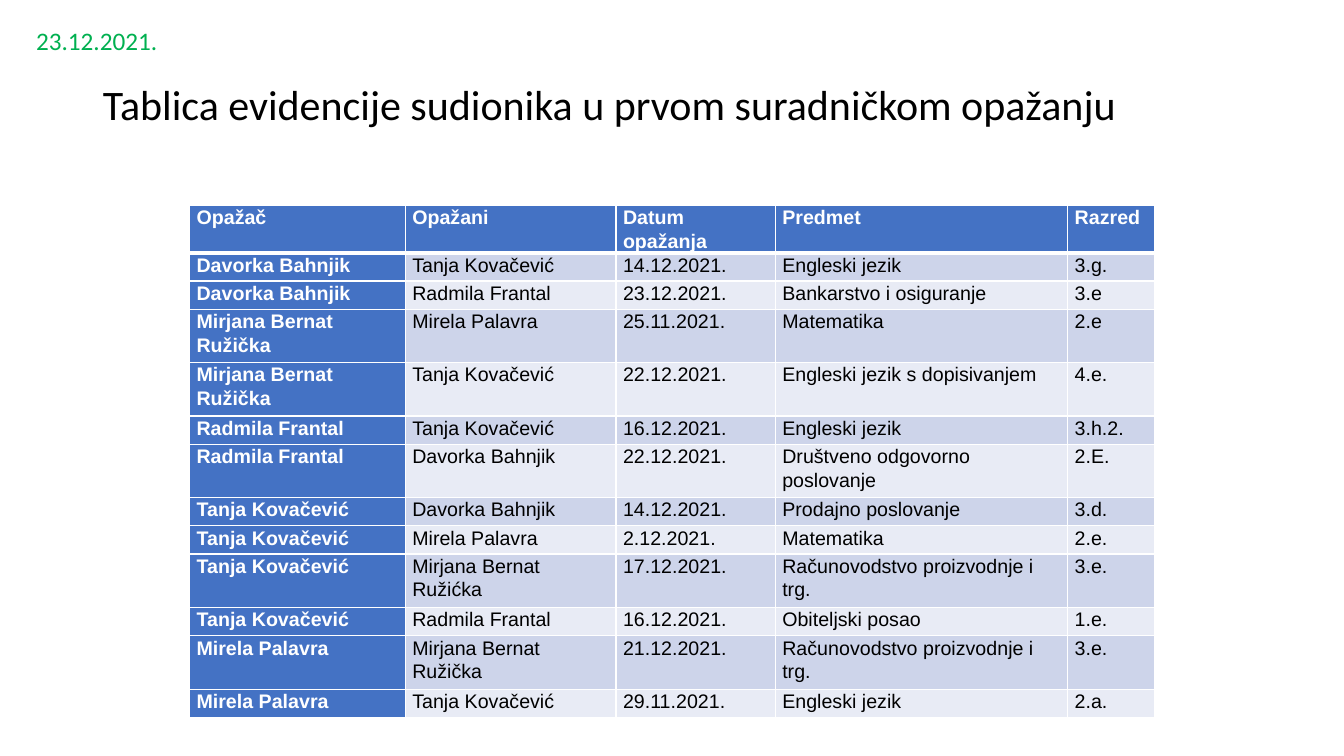
import pptx
import pptx.dml.color
import pptx.enum.text
import pptx.oxml
import pptx.oxml.ns
import pptx.util

Inches = pptx.util.Inches
Pt = pptx.util.Pt
RGBColor = pptx.dml.color.RGBColor

BLACK = RGBColor(0x00, 0x00, 0x00)
WHITE = RGBColor(0xFF, 0xFF, 0xFF)
GREEN = RGBColor(0x00, 0xB0, 0x50)
BLUE = RGBColor(0x44, 0x72, 0xC4)
DARK_BAND = RGBColor(0xCD, 0xD4, 0xEA)
LIGHT_BAND = RGBColor(0xE8, 0xEB, 0xF5)

SINGLE_ROW, DOUBLE_ROW = 0.28, 0.53
COLUMN_WIDTHS = (2.14, 2.09, 1.58, 2.9, 0.86)
DOUBLE_ROWS = (3, 4, 6, 9, 11)
OBSERVATIONS = (
    ("Opažač", "Opažani", "Datum opažanja", "Predmet", "Razred"),
    ("Davorka Bahnjik", "Tanja Kovačević", "14.12.2021.", "Engleski jezik", "3.g."),
    ("Davorka Bahnjik", "Radmila Frantal", "23.12.2021.", "Bankarstvo i osiguranje", "3.e"),
    ("Mirjana Bernat Ružička", "Mirela Palavra", "25.11.2021.", "Matematika", "2.e"),
    ("Mirjana Bernat Ružička", "Tanja Kovačević", "22.12.2021.", "Engleski jezik s dopisivanjem", "4.e."),
    ("Radmila Frantal", "Tanja Kovačević", "16.12.2021.", "Engleski jezik", "3.h.2."),
    ("Radmila Frantal", "Davorka Bahnjik", "22.12.2021.", "Društveno odgovorno poslovanje", "2.E."),
    ("Tanja Kovačević", "Davorka Bahnjik", "14.12.2021.", "Prodajno poslovanje", "3.d."),
    ("Tanja Kovačević", "Mirela Palavra", "2.12.2021.", "Matematika", "2.e."),
    ("Tanja Kovačević", "Mirjana Bernat Ružićka", "17.12.2021.", "Računovodstvo proizvodnje i trg.", "3.e."),
    ("Tanja Kovačević", "Radmila Frantal", "16.12.2021.", "Obiteljski posao", "1.e."),
    ("Mirela Palavra", "Mirjana Bernat Ružička", "21.12.2021.", "Računovodstvo proizvodnje i trg.", "3.e."),
    ("Mirela Palavra", "Tanja Kovačević", "29.11.2021.", "Engleski jezik", "2.a."),
)


def add_span(para, text, size, font, color, bold=False):
    """Add one formatted run to a paragraph."""
    span = para.add_run()
    span.text = text
    span.font.size = Pt(size)
    span.font.name = font
    span.font.bold = bold
    span.font.color.rgb = color


def set_borders(cell, bottom_width):
    """Draw white borders around a cell."""
    properties = cell._tc.get_or_add_tcPr()
    for side in "LRTB":
        width = Pt(bottom_width if side == "B" else 1)
        properties.append(pptx.oxml.parse_xml(
            f'<a:ln{side} {pptx.oxml.ns.nsdecls("a")} w="{width}"><a:solidFill>'
            f'<a:srgbClr val="{WHITE}"/></a:solidFill></a:ln{side}>'))


def fill_cell(cell, text, row, column):
    """Write and colour one cell according to its place in the table."""
    heading = row == 0 or column == 0
    set_borders(cell, 3 if row == 0 else 1)
    cell.fill.solid()
    cell.fill.fore_color.rgb = BLUE if heading else DARK_BAND if row % 2 else LIGHT_BAND
    cell.margin_left = cell.margin_right = Inches(0.07)
    cell.margin_top = cell.margin_bottom = 0
    para = cell.text_frame.paragraphs[0]
    para.line_spacing = 1.07
    add_span(para, text, 14, "Arial", WHITE if heading else BLACK, heading)


def add_title(page, left, top, width, height):
    """Place the title in its placeholder."""
    box = page.shapes.title
    box.left, box.top, box.width, box.height = map(Inches, (left, top, width, height))
    frame = box.text_frame
    frame.auto_size = pptx.enum.text.MSO_AUTO_SIZE.NONE
    frame.vertical_anchor = pptx.enum.text.MSO_ANCHOR.BOTTOM
    para = frame.paragraphs[0]
    para.alignment = pptx.enum.text.PP_ALIGN.LEFT
    para.line_spacing = 0.9
    add_span(para, "Tablica evidencije sudionika u prvom suradničkom opažanju", 30, "Calibri", BLACK)


def add_observations(page, left, top):
    """Place the table of observations."""
    heights = [DOUBLE_ROW if row in DOUBLE_ROWS else SINGLE_ROW for row in range(len(OBSERVATIONS))]
    table = page.shapes.add_table(
        len(heights), len(COLUMN_WIDTHS), Inches(left), Inches(top),
        Inches(sum(COLUMN_WIDTHS)), Inches(sum(heights))).table
    table.first_col = True
    for column, width in zip(table.columns, COLUMN_WIDTHS):
        column.width = Inches(width)
    for row, texts in enumerate(OBSERVATIONS):
        table.rows[row].height = Inches(heights[row])
        for column, text in enumerate(texts):
            fill_cell(table.cell(row, column), text, row, column)


def add_date(page, left, top, width, height):
    """Place the date in the corner."""
    box = page.shapes.add_textbox(*map(Inches, (left, top, width, height)))
    box.text_frame.word_wrap = True
    box.text_frame.auto_size = pptx.enum.text.MSO_AUTO_SIZE.SHAPE_TO_FIT_TEXT
    add_span(box.text_frame.paragraphs[0], "23.12.2021.", 18, "Calibri", GREEN)


def main():
    """Build and save the slide."""
    deck = pptx.Presentation()
    deck.slide_width, deck.slide_height = Inches(13.33), Inches(7.5)
    page = deck.slides.add_slide(deck.slide_layouts[5])
    add_title(page, 0.92, 0.32, 11.5, 1.02)
    add_observations(page, 1.88, 2.04)
    add_date(page, 0.26, 0.2, 2.01, 0.4)
    deck.save("out.pptx")


if __name__ == "__main__":
    main()
